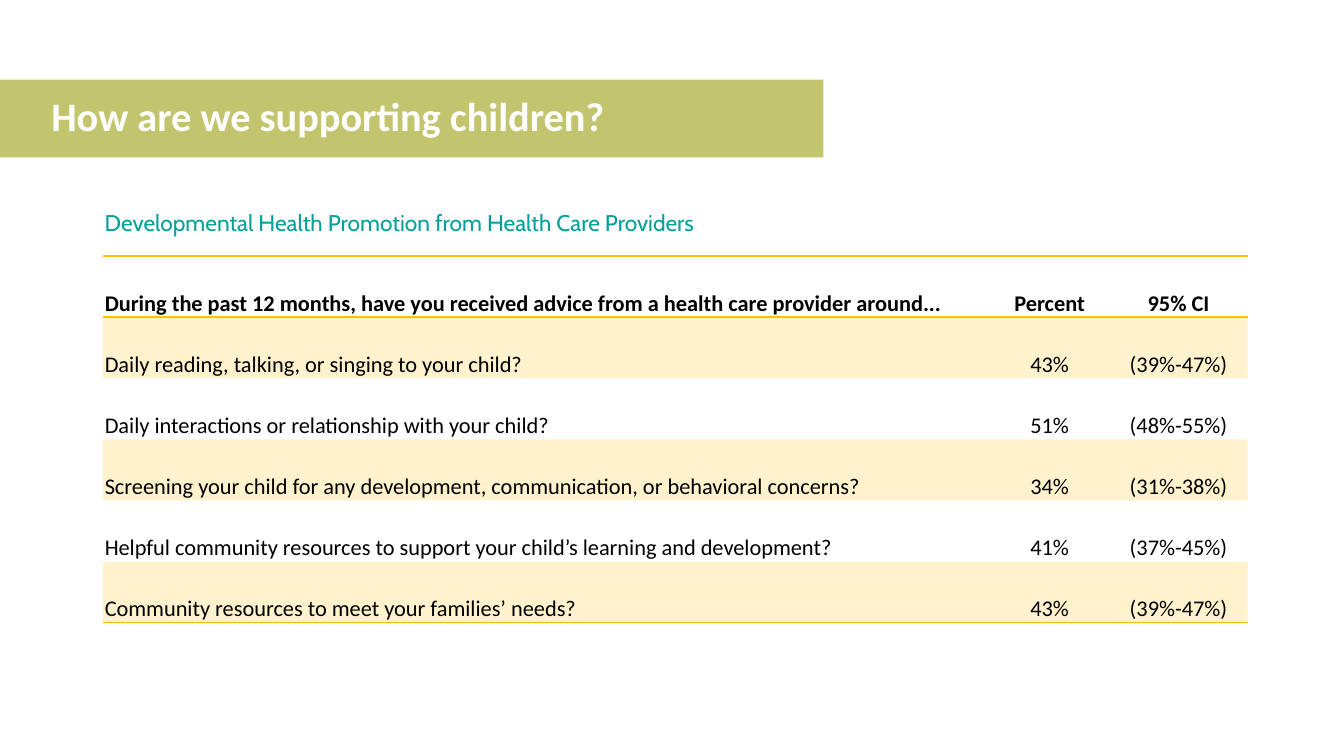
from dataclasses import dataclass

from lxml import etree
from pptx import Presentation
from pptx import util as u
from pptx.dml.color import RGBColor
from pptx.enum import shapes, text
from pptx.oxml import ns

GOLD = "FFC000"
OLIVE = "AAAD31"
TEAL = "00A19B"
NO_GRID_STYLE = "{2D5ABB26-0587-4C30-8999-92F81FD0307C}"


@dataclass
class SurveyRow:
    label: str
    percent: str
    interval: str
    bold: bool = False
    shaded: bool = False
    borders: tuple[str, ...] = ()


ROWS = [
    SurveyRow("During the past 12 months, have you received advice from a health care provider around...",
              "Percent", "95% CI", bold=True, borders=("a:lnT", "a:lnB")),
    SurveyRow("Daily reading, talking, or singing to your child?", "43%", "(39%-47%)", shaded=True),
    SurveyRow("Daily interactions or relationship with your child?", "51%", "(48%-55%)"),
    SurveyRow("Screening your child for any development, communication, or behavioral concerns?",
              "34%", "(31%-38%)", shaded=True),
    SurveyRow("Helpful community resources to support your child’s learning and development?",
              "41%", "(37%-45%)"),
    SurveyRow("Community resources to meet your families’ needs?", "43%", "(39%-47%)",
              shaded=True, borders=("a:lnB",)),
]
COLUMN_WIDTHS = [22.35, 3.02, 3.48]
ROW_HEIGHT = 1.54


def rgb(color: str) -> RGBColor:
    return RGBColor.from_string(color)


def fill_solid(fill, properties, color: str, opacity: int) -> None:
    fill.solid()
    fill.fore_color.rgb = rgb(color)
    color_element = next(properties.iter(ns.qn("a:srgbClr")))
    etree.SubElement(color_element, ns.qn("a:alpha"), val=str(opacity * 1000))


def format_text(paragraph, size: float, color: str, name: str = "Calibri", bold: bool = False) -> None:
    for run in paragraph.runs:
        run.font.size = u.Pt(size)
        run.font.name = name
        run.font.bold = bold
        run.font.color.rgb = rgb(color)


def place(shape, left: float, top: float, width: float, height: float) -> None:
    shape.left, shape.top = u.Cm(left), u.Cm(top)
    shape.width, shape.height = u.Cm(width), u.Cm(height)


def add_heading(slide) -> None:
    band = slide.shapes.add_shape(shapes.MSO_SHAPE.RECTANGLE, 0, u.Cm(2.01), u.Cm(20.75), u.Cm(1.96))
    band.shadow.inherit = False
    band.line.fill.background()
    fill_solid(band.fill, band._element.spPr, OLIVE, 70)

    title = slide.shapes.title
    place(title, 1.04, 2.34, 19.2, 1.3)
    title._element.addprevious(band._element)
    frame = title.text_frame
    frame.text = "How are we supporting children?"
    frame.auto_size = text.MSO_AUTO_SIZE.NONE
    frame.vertical_anchor = text.MSO_ANCHOR.MIDDLE
    paragraph = frame.paragraphs[0]
    paragraph.alignment = text.PP_ALIGN.LEFT
    paragraph.line_spacing = 0.9
    format_text(paragraph, 28.8, "FFFFFF", bold=True)


def add_subtitle(slide) -> None:
    subtitle = slide.shapes.add_textbox(u.Cm(2.39), u.Cm(5.16), u.Cm(16.1), u.Cm(1.3))
    frame = subtitle.text_frame
    frame.word_wrap = True
    frame.text = "Developmental Health Promotion from Health Care Providers"
    paragraph = frame.paragraphs[0]
    paragraph.line_spacing = 0.9
    format_text(paragraph, 28, TEAL, "Cabin")
    paragraph.runs[0].font._element.set("baseline", "30000")


def add_borders(cell, sides: tuple[str, ...]) -> None:
    properties = cell._tc.get_or_add_tcPr()
    for position, side in enumerate(sides):
        line = etree.Element(ns.qn(side), w=str(u.Pt(1)))
        solid = etree.SubElement(line, ns.qn("a:solidFill"))
        etree.SubElement(solid, ns.qn("a:srgbClr"), val=GOLD)
        properties.insert(position, line)


def format_cell(cell, content: str, row: SurveyRow, centred: bool) -> None:
    cell.text_frame.text = content
    cell.vertical_anchor = text.MSO_ANCHOR.BOTTOM
    cell.margin_left = cell.margin_right = cell.margin_top = u.Cm(0.05)
    cell.margin_bottom = 0
    paragraph = cell.text_frame.paragraphs[0]
    paragraph.alignment = text.PP_ALIGN.CENTER if centred else text.PP_ALIGN.LEFT
    format_text(paragraph, 16, "000000", bold=row.bold)
    if row.shaded:
        fill_solid(cell.fill, cell._tc.tcPr, GOLD, 20)
    else:
        cell.fill.background()
    add_borders(cell, row.borders)


def add_survey_table(slide) -> None:
    frame = slide.shapes.add_table(len(ROWS), len(COLUMN_WIDTHS), u.Cm(2.59), u.Cm(6.45),
                                   u.Cm(sum(COLUMN_WIDTHS)), u.Cm(ROW_HEIGHT * len(ROWS)))
    table = frame.table
    table.first_row = table.horz_banding = False
    table._tbl.tblPr.find(ns.qn("a:tableStyleId")).text = NO_GRID_STYLE
    for column, width in zip(table.columns, COLUMN_WIDTHS):
        column.width = u.Cm(width)
    for table_row, row in zip(table.rows, ROWS):
        table_row.height = u.Cm(ROW_HEIGHT)
        for index, content in enumerate((row.label, row.percent, row.interval)):
            format_cell(table_row.cells[index], content, row, centred=index > 0)


def main() -> None:
    presentation = Presentation()
    presentation.slide_width, presentation.slide_height = u.Cm(33.87), u.Cm(19.05)
    slide = presentation.slides.add_slide(presentation.slide_layouts.get_by_name("Title Only"))
    add_heading(slide)
    add_subtitle(slide)
    add_survey_table(slide)
    presentation.save("out.pptx")


if __name__ == "__main__":
    main()
